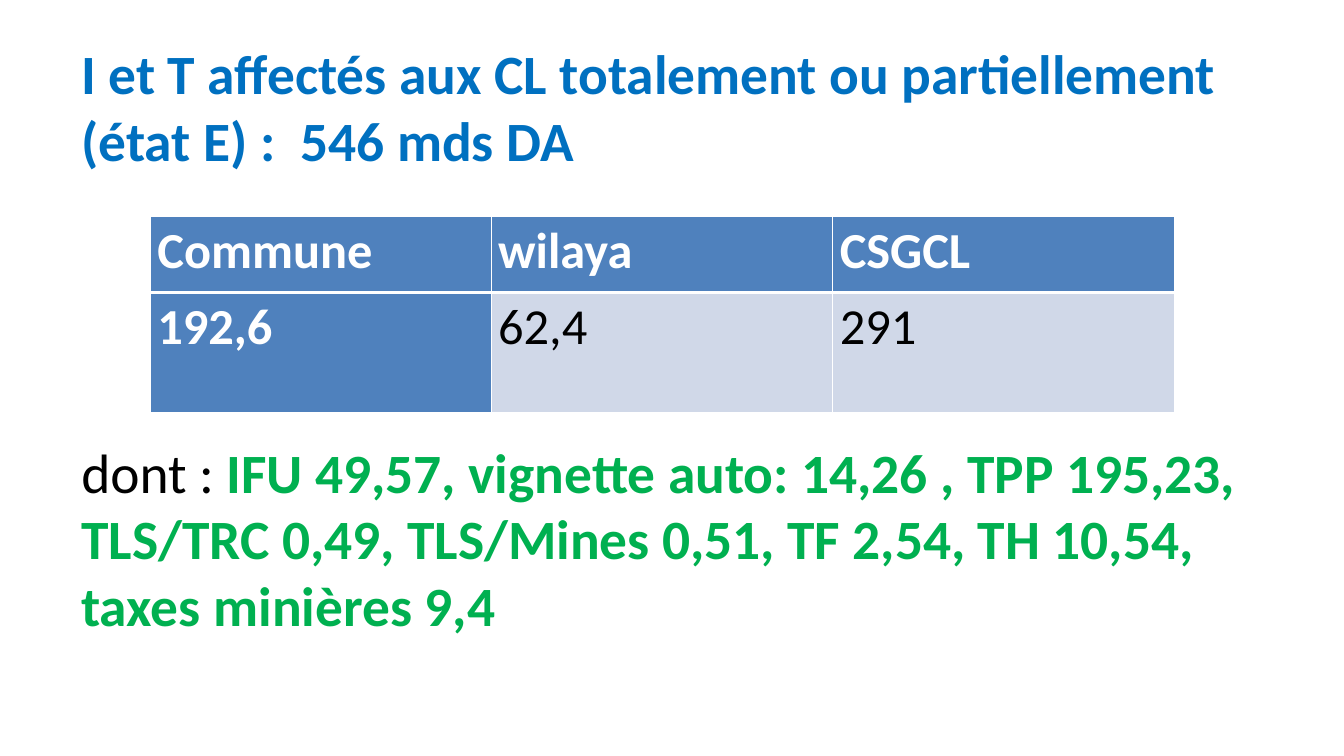
from dataclasses import dataclass

from lxml.etree import SubElement
from pptx import Presentation
from pptx.dml.color import RGBColor
from pptx.enum.text import MSO_ANCHOR, MSO_AUTO_SIZE, PP_ALIGN
from pptx.oxml.ns import qn
from pptx.util import Pt


@dataclass(frozen=True)
class Theme:
    font: str = "Calibri"
    text_size: float = 39.6
    table_size: float = 36
    black: RGBColor = RGBColor(0x00, 0x00, 0x00)
    white: RGBColor = RGBColor(0xFF, 0xFF, 0xFF)
    title_blue: RGBColor = RGBColor(0x00, 0x70, 0xC0)
    detail_green: RGBColor = RGBColor(0x00, 0xB0, 0x50)
    header_fill: RGBColor = RGBColor(0x4F, 0x81, 0xBD)
    value_fill: RGBColor = RGBColor(0xD0, 0xD8, 0xE8)


THEME = Theme()
TEXT_LEFT, TEXT_WIDTH = 51, 864
REVENUES = [["Commune", "wilaya", "CSGCL"], ["192,6", "62,4", "291"]]
COLUMN_WIDTHS = [243.4, 244, 244]
ROW_HEIGHTS = [54.5, 85.5]
THIN, THICK = 1, 3


def set_attributes(target, values):
    for name, value in values.items():
        setattr(target, name, value)


def add_run(paragraph, text, size, color, bold):
    run = paragraph.add_run()
    run.text = text
    set_attributes(run.font, {"name": THEME.font, "size": Pt(size), "bold": bold})
    run.font.color.rgb = color


def fill_text(shape, top, height, runs):
    """Place a text shape in the text column and write its (text, color, bold) runs."""
    set_attributes(shape, {"left": Pt(TEXT_LEFT), "top": Pt(top),
                           "width": Pt(TEXT_WIDTH), "height": Pt(height)})
    set_attributes(shape.text_frame, {
        "word_wrap": True,
        "auto_size": MSO_AUTO_SIZE.NONE,
        "vertical_anchor": MSO_ANCHOR.TOP,
    })
    paragraph = shape.text_frame.paragraphs[0]
    paragraph.alignment = PP_ALIGN.LEFT
    for text, color, bold in runs:
        add_run(paragraph, text, THEME.text_size, color, bold)


def set_borders(cell, widths):
    """Draw white borders; must run before the fill, which follows them in the XML."""
    properties = cell._tc.get_or_add_tcPr()
    for side, width in widths.items():
        line = SubElement(properties, qn(f"a:ln{side}"), w=str(Pt(width)))
        fill = SubElement(line, qn("a:solidFill"))
        SubElement(fill, qn("a:srgbClr"), val=str(THEME.white))


def format_cell(cell, text, is_header, borders):
    set_attributes(cell, {"margin_left": Pt(5), "margin_right": Pt(5),
                          "margin_top": 0, "margin_bottom": 0})
    set_borders(cell, borders)
    cell.fill.solid()
    cell.fill.fore_color.rgb = THEME.header_fill if is_header else THEME.value_fill
    paragraph = cell.text_frame.paragraphs[0]
    set_attributes(paragraph, {"alignment": PP_ALIGN.JUSTIFY, "line_spacing": 1.07})
    color = THEME.white if is_header else THEME.black
    add_run(paragraph, text, THEME.table_size, color, is_header)


def add_revenue_table(slide, left, top):
    table = slide.shapes.add_table(
        len(REVENUES), len(COLUMN_WIDTHS), Pt(left), Pt(top),
        Pt(sum(COLUMN_WIDTHS)), Pt(sum(ROW_HEIGHTS))).table
    table.first_col = True
    for column, width in zip(table.columns, COLUMN_WIDTHS):
        column.width = Pt(width)
    for row, height in zip(table.rows, ROW_HEIGHTS):
        row.height = Pt(height)
    for row_index, texts in enumerate(REVENUES):
        first_row = row_index == 0
        borders = {"L": THIN, "R": THIN,
                   "T": THIN if first_row else THICK,
                   "B": THICK if first_row else THIN}
        for column_index, text in enumerate(texts):
            is_header = first_row or column_index == 0
            format_cell(table.cell(row_index, column_index), text, is_header, borders)


def main():
    presentation = Presentation()
    set_attributes(presentation, {"slide_width": Pt(960), "slide_height": Pt(540)})
    slide = presentation.slides.add_slide(
        presentation.slide_layouts.get_by_name("Title Only"))
    fill_text(slide.shapes.title, 24.3, 104, [
        ("I et T affectés aux CL totalement ou partiellement (état E) :  546 mds DA",
         THEME.title_blue, True),
    ])
    add_revenue_table(slide, 107.5, 154.5)
    details = slide.shapes.add_textbox(0, 0, 0, 0)
    fill_text(details, 309.3, 152, [
        ("dont : ", THEME.black, False),
        ("IFU 49,57, vignette auto: 14,26 , TPP 195,23, TLS/TRC 0,49, "
         "TLS/Mines 0,51, TF 2,54, TH 10,54, taxes minières 9,4",
         THEME.detail_green, True),
    ])
    presentation.save("out.pptx")


if __name__ == "__main__":
    main()
